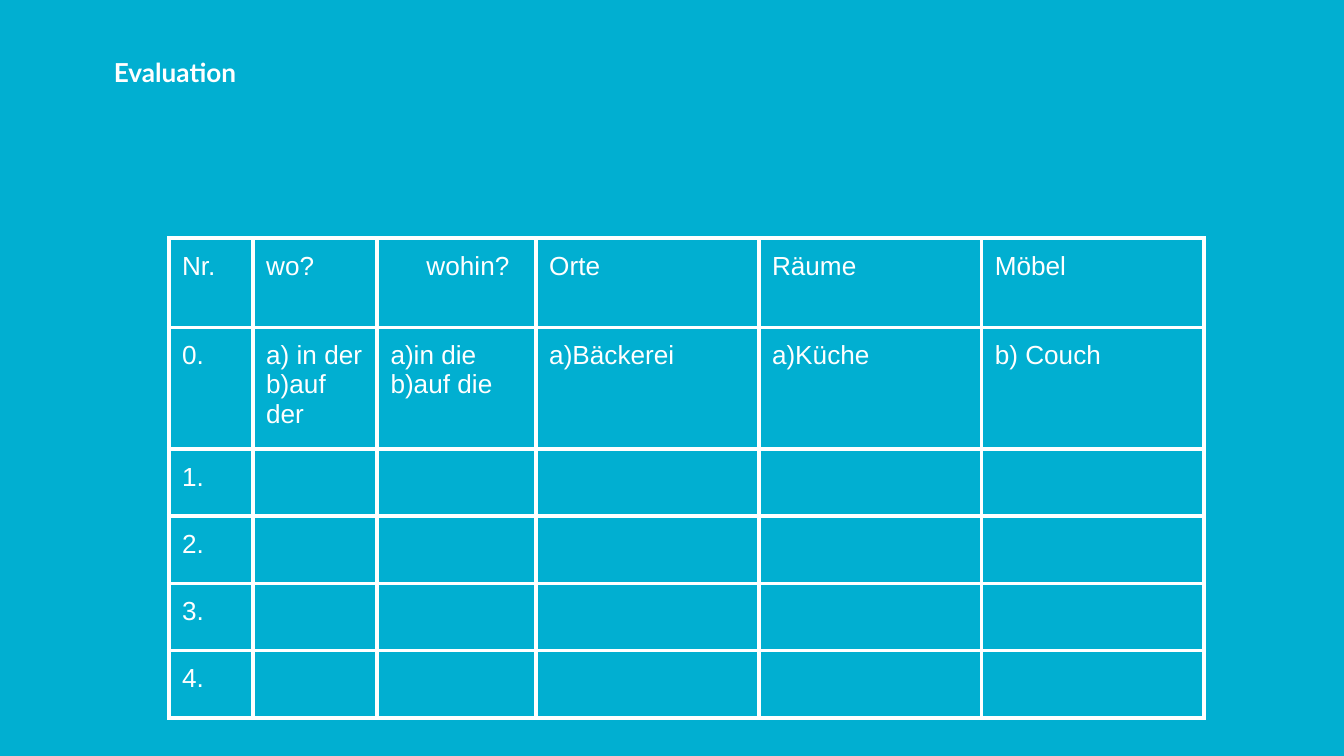
from dataclasses import dataclass

from lxml.etree import SubElement
from pptx import Presentation
from pptx.dml.color import RGBColor
from pptx.enum.text import MSO_ANCHOR as Anchor, MSO_AUTO_SIZE as AutoSize, PP_ALIGN as Align
from pptx.oxml.ns import qn
from pptx.slide import Slide
from pptx.table import _Cell as Cell
from pptx.text.text import TextFrame
from pptx.util import Cm, Pt

BACKGROUND = "01AFD1"
WHITE = "FFFFFF"
INSET = 0.25
BORDER_WIDTH = Pt(2.25)
COLUMN_WIDTHS = [1.59, 2.35, 3, 4.21, 4.21, 4.21]


@dataclass
class Row:
    height: float
    texts: list[str]


ROWS = [
    Row(1.69, ["Nr.", "wo?", "wohin?", "Orte", "Räume", "Möbel"]),
    Row(2.3, ["0.", "a) in der\nb)auf der", "a)in die\nb)auf die",
              "a)Bäckerei", "a)Küche", "b) Couch"]),
    *(Row(1.27, [f"{number}."] + [""] * 5) for number in range(1, 5)),
]


def color(value: str) -> RGBColor:
    """Turn a hex string into a colour."""
    return RGBColor.from_string(value)


def write(frame: TextFrame, text: str, font: str, bold: bool = False) -> None:
    """Fill a text frame with left-aligned white text."""
    frame.text = text
    frame.word_wrap = True
    for para in frame.paragraphs:
        para.alignment = Align.LEFT
        para.font.name = font
        para.font.size = Pt(14)
        para.font.bold = bold
        para.font.color.rgb = color(WHITE)


def add_borders(cell: Cell) -> None:
    """Draw a white line on all four sides of a cell."""
    properties = cell._tc.get_or_add_tcPr()
    for side in ("lnL", "lnR", "lnT", "lnB"):
        line = SubElement(properties, qn(f"a:{side}"), w=str(BORDER_WIDTH))
        fill = SubElement(line, qn("a:solidFill"))
        SubElement(fill, qn("a:srgbClr"), val=WHITE)


def format_cell(cell: Cell, text: str) -> None:
    """Write and style one table cell."""
    cell.margin_left = cell.margin_right = Cm(INSET)
    cell.margin_top = cell.margin_bottom = Cm(INSET)
    cell.vertical_anchor = Anchor.TOP
    add_borders(cell)
    cell.fill.background()
    write(cell.text_frame, text, "Arial")


def add_title(page: Slide, text: str) -> None:
    """Place and format the slide title."""
    box = page.shapes.title
    box.left, box.top, box.width, box.height = Cm(1.9), Cm(0.81), Cm(9.37), Cm(1.12)
    frame = box.text_frame
    frame.margin_left = frame.margin_right = Cm(INSET)
    frame.margin_top = frame.margin_bottom = Cm(INSET)
    frame.vertical_anchor = Anchor.TOP
    write(frame, text, "Lato", bold=True)
    frame.auto_size = AutoSize.SHAPE_TO_FIT_TEXT


def add_answer_table(page: Slide) -> None:
    """Add the table of places, rooms and furniture."""
    width = sum(COLUMN_WIDTHS)
    height = sum(row.height for row in ROWS)
    table = page.shapes.add_table(len(ROWS), len(COLUMN_WIDTHS), Cm(3.19), Cm(4.5),
                                  Cm(width), Cm(height)).table
    table.first_row = table.horz_banding = False
    for column, column_width in zip(table.columns, COLUMN_WIDTHS):
        column.width = Cm(column_width)
    for table_row, row in zip(table.rows, ROWS):
        table_row.height = Cm(row.height)
        for cell, text in zip(table_row.cells, row.texts):
            format_cell(cell, text)
    table.cell(0, 2).margin_left = Cm(INSET + 0.68)


def main() -> None:
    """Build and save the evaluation slide."""
    deck = Presentation()
    deck.slide_width, deck.slide_height = Cm(25.4), Cm(14.29)
    page = deck.slides.add_slide(deck.slide_layouts[5])
    page.background.fill.solid()
    page.background.fill.fore_color.rgb = color(BACKGROUND)
    add_title(page, "Evaluation")
    add_answer_table(page)
    deck.save("out.pptx")


if __name__ == "__main__":
    main()
